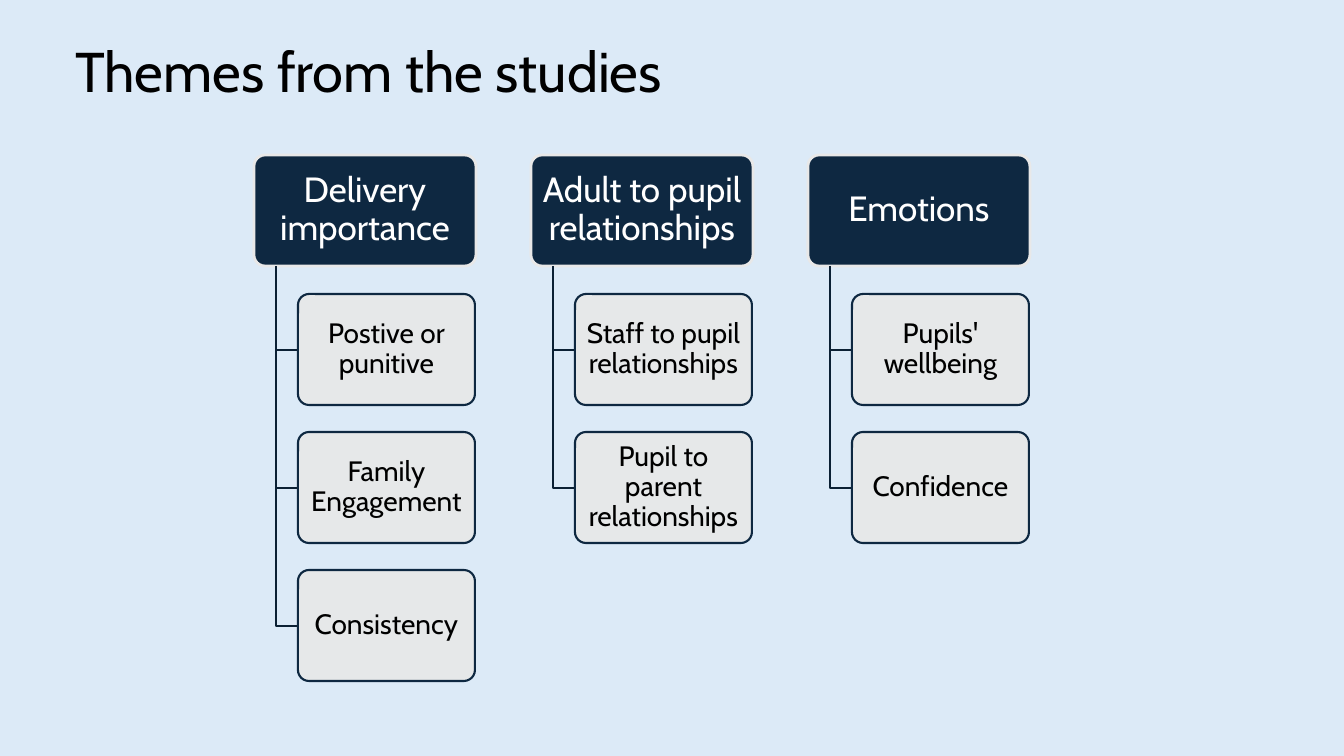
from lxml import etree
from pptx import Presentation
from pptx.dml.color import RGBColor
from pptx.enum.shapes import MSO_SHAPE
from pptx.enum.text import MSO_ANCHOR, MSO_AUTO_SIZE, PP_ALIGN
from pptx.oxml.ns import qn
from pptx.util import Pt

# Content
TITLE = "Themes from the studies"
THEMES = [
    ("Delivery importance",
     ["Postive or punitive", "Family Engagement", "Consistency"]),
    ("Adult to pupil relationships",
     ["Staff to pupil relationships", "Pupil to parent relationships"]),
    ("Emotions", ["Pupils' wellbeing", "Confidence"]),
]

# Style
FONT = "Cabin"
SKY = RGBColor(0xDC, 0xEA, 0xF7)
NAVY = RGBColor(0x0E, 0x28, 0x41)
TRUNK = RGBColor(0x0B, 0x20, 0x34)
GREY = RGBColor(0xE8, 0xE8, 0xE8)
BLACK = RGBColor(0, 0, 0)
WHITE = RGBColor(0xFF, 0xFF, 0xFF)
ROUNDED = MSO_SHAPE.ROUNDED_RECTANGLE
MIDDLE = MSO_ANCHOR.MIDDLE
LEFT, CENTER = PP_ALIGN.LEFT, PP_ALIGN.CENTER

# Layout in px
SCALE = 914400 / 100.8
COLUMN_X, COLUMN_STEP = 254, 277
HEAD_Y, HEAD_W, BOX_H = 155, 222, 111
CARD_Y, CARD_STEP, CARD_W = 294, 138, 177
TRUNK_INDENT, CARD_INDENT = 22, 44


def px(n):
    return round(n * SCALE)


def write(tf, text, size, color, align):
    tf.word_wrap = True
    tf.auto_size = MSO_AUTO_SIZE.NONE
    tf.vertical_anchor = MIDDLE
    p = tf.paragraphs[0]
    p.alignment = align
    p.line_spacing = 0.9
    r = p.add_run()
    r.text = text
    r.font.name = FONT
    r.font.size = Pt(size)
    r.font.color.rgb = color


def add_box(s, x, y, w, text, size, color, fill, line, line_w, inset):
    sp = s.shapes.add_shape(ROUNDED, px(x), px(y), px(w), px(BOX_H))
    sp.shadow.inherit = False
    sp.adjustments[0] = 0.1
    sp.fill.solid()
    sp.fill.fore_color.rgb = fill
    sp.line.color.rgb = line
    sp.line.width = Pt(line_w)
    tf = sp.text_frame
    tf.margin_left = tf.margin_right = px(inset)
    tf.margin_top = tf.margin_bottom = px(3)
    write(tf, text, size, color, CENTER)
    return sp


def add_elbow(s, x, top, end_x, end_y):
    builder = s.shapes.build_freeform(x, top, scale=SCALE)
    builder.add_line_segments([(x, end_y), (end_x, end_y)], close=False)
    sp = builder.convert_to_shape()
    sp.shadow.inherit = False
    sp.fill.background()
    sp.line.color.rgb = TRUNK
    sp.line.width = Pt(1.5)


def set_opacity(sp, percent):
    color = sp.fill._xPr.find(qn("a:solidFill"))[0]
    etree.SubElement(color, qn("a:alpha")).set("val", str(percent * 1000))


def main():
    prs = Presentation()
    prs.slide_width, prs.slide_height = px(1344), px(756)
    s = prs.slides.add_slide(prs.slide_layouts[5])
    s.background.fill.solid()
    s.background.fill.fore_color.rgb = SKY

    # Title
    title = s.shapes.title
    title.left, title.top = px(65), px(14)
    title.width, title.height = px(1122), px(121)
    write(title.text_frame, TITLE, 40, BLACK, LEFT)

    # One column per theme, its cards hanging from a trunk line
    for col, (theme, cards) in enumerate(THEMES):
        x = COLUMN_X + col * COLUMN_STEP
        add_box(s, x, HEAD_Y, HEAD_W, theme, 25, WHITE, NAVY, GREY, 2, 5)
        card_x = x + CARD_INDENT
        for row, text in enumerate(cards):
            y = CARD_Y + row * CARD_STEP
            add_elbow(s, x + TRUNK_INDENT, HEAD_Y + BOX_H,
                      card_x, y + BOX_H / 2)
            card = add_box(s, card_x, y, CARD_W, text, 20, BLACK,
                           GREY, NAVY, 1.5, 4)
            set_opacity(card, 90)

    prs.save("out.pptx")


if __name__ == "__main__":
    main()
